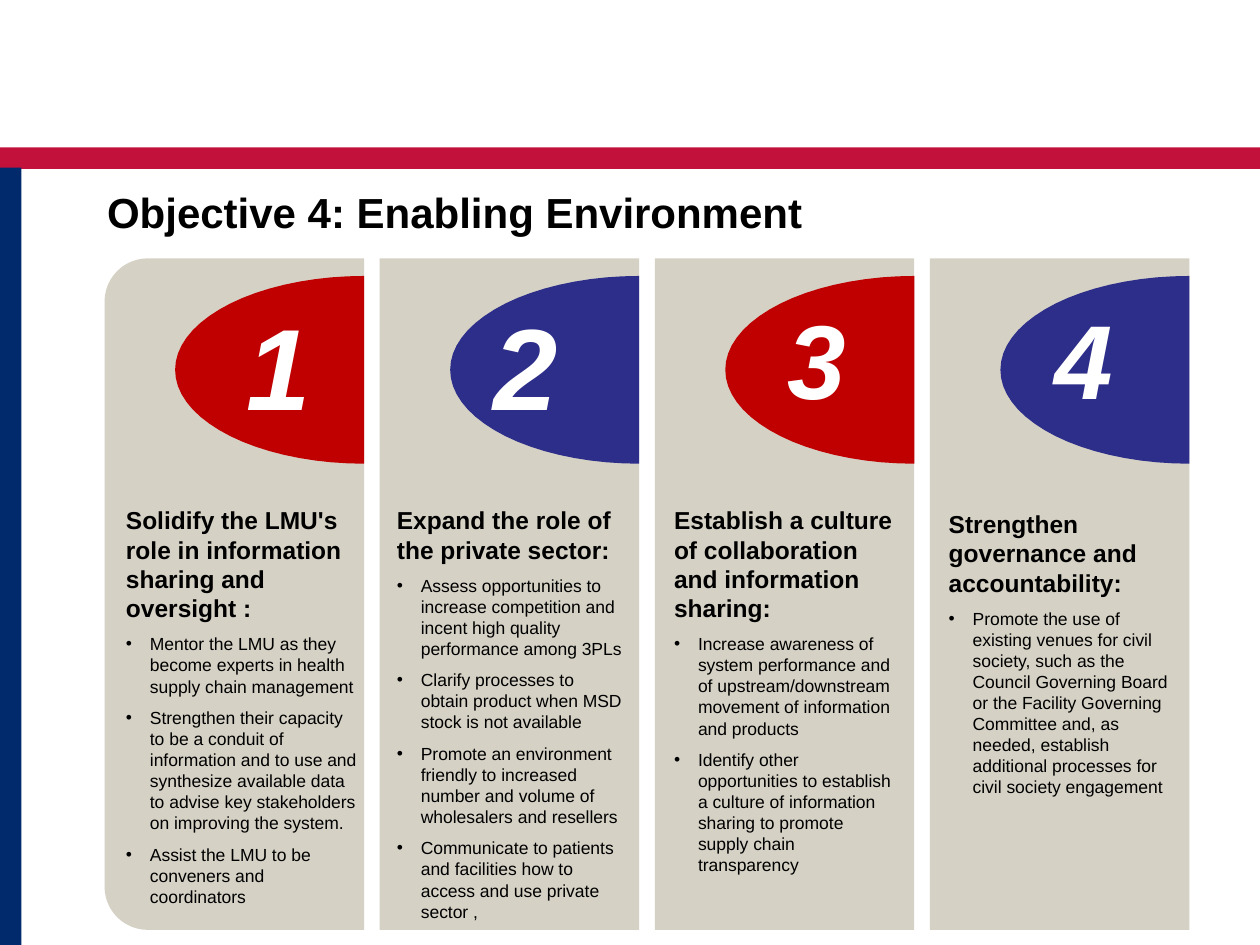
"""Build the slide on Objective 4, with four numbered cards."""
from dataclasses import dataclass
from math import cos, pi, sin

from lxml.etree import SubElement
from pptx import Presentation
from pptx.dml.color import RGBColor
from pptx.enum.shapes import MSO_SHAPE as Preset
from pptx.enum.text import MSO_ANCHOR as Anchor, PP_ALIGN as Align
from pptx.oxml.ns import qn
from pptx.util import Inches, Pt

COLORS = {
    "crimson": "C2113A",
    "navy": "002A6C",
    "card": "D5D1C5",
    "red": "C00000",
    "blue": "2D2D8A",
    "white": "FFFFFF",
    "black": "000000",
}
FONT = "Arial"
CARD_LEFT, LAST_CARD_LEFT, CARD_TOP = 0.83, 7.38, 2.05
CARD_PITCH = (LAST_CARD_LEFT - CARD_LEFT) / 3
CARD_WIDTH, CARD_HEIGHT = 2.06, 5.33
ARC_TOP, ARC_WIDTH, ARC_HEIGHT, ARC_STEPS = 2.19, 1.5, 1.49, 36


@dataclass(frozen=True)
class TextArea:
    left: float
    top: float
    width: float
    height: float


@dataclass(frozen=True)
class Card:
    accent: str
    number_area: TextArea
    number_size: int
    body_area: TextArea
    heading: str
    bullets: tuple[str, ...]


CARDS = (
    Card("red", TextArea(1.96, 2.34, 0.85, 1.02), 66, TextArea(1, 4.01, 1.84, 3.21),
         "Solidify the LMU's role in information sharing and oversight :",
         ("Mentor the LMU as they become experts in health supply chain management",
          "Strengthen their capacity to be a conduit of information and to use and "
          "synthesize available data to advise key stakeholders on improving the system.",
          "Assist the LMU to be conveners and coordinators")),
    Card("blue", TextArea(3.92, 2.34, 1.08, 1.02), 66, TextArea(3.15, 4.01, 1.81, 3.33),
         "Expand the role of the private sector:",
         ("Assess opportunities to increase competition and incent high quality "
          "performance among 3PLs",
          "Clarify processes to obtain product when MSD stock is not available",
          "Promote an environment friendly to increased number and volume of "
          "wholesalers and resellers",
          "Communicate to patients and facilities how to access and use private sector ,")),
    Card("red", TextArea(6.25, 2.34, 0.98, 0.93), 60, TextArea(5.35, 4.01, 1.74, 2.96),
         "Establish a culture of collaboration and information sharing:",
         ("Increase awareness of system performance and of upstream/downstream "
          "movement of information and products",
          "Identify other opportunities to establish a culture of information sharing "
          "to promote supply chain transparency")),
    Card("blue", TextArea(8.37, 2.34, 1.02, 0.93), 60, TextArea(7.53, 4.04, 1.74, 2.31),
         "Strengthen governance and accountability:",
         ("Promote the use of existing venues for civil society, such as the Council "
          "Governing Board or the Facility Governing Committee and, as needed, establish "
          "additional processes for civil society engagement",)),
)


def paint(shape, color: str) -> None:
    shape.shadow.inherit = False
    shape.fill.solid()
    shape.fill.fore_color.rgb = RGBColor.from_string(COLORS[color])
    shape.line.fill.background()


def add_block(shapes, preset, left: float, top: float, width: float, height: float, color: str):
    shape = shapes.add_shape(preset, Inches(left), Inches(top), Inches(width), Inches(height))
    paint(shape, color)
    return shape


def add_half_ellipse(shapes, right: float, color: str) -> None:
    middle = ARC_TOP + ARC_HEIGHT / 2
    angles = [pi * step / ARC_STEPS for step in range(ARC_STEPS + 1)]
    points = [(Inches(right - ARC_WIDTH * sin(angle)),
               Inches(middle - ARC_HEIGHT / 2 * cos(angle))) for angle in angles]
    builder = shapes.build_freeform(*points[0])
    builder.add_line_segments(points[1:], close=True)
    paint(builder.convert_to_shape(), color)


def add_run(paragraph, text: str, size: int, color: str, bold=False, italic=False) -> None:
    run = paragraph.add_run()
    run.text = text
    font = run.font
    font.name, font.size, font.bold, font.italic = FONT, Pt(size), bold, italic
    font.color.rgb = RGBColor.from_string(COLORS[color])


def add_frame(shapes, area: TextArea):
    box = shapes.add_textbox(Inches(area.left), Inches(area.top),
                             Inches(area.width), Inches(area.height))
    frame = box.text_frame
    frame.word_wrap = True
    frame.margin_left = frame.margin_right = frame.margin_top = frame.margin_bottom = 0
    return frame


def add_bullet(paragraph) -> None:
    properties = paragraph._p.get_or_add_pPr()
    properties.set("marL", str(Inches(0.19)))
    properties.set("indent", str(-Inches(0.19)))
    SubElement(properties, qn("a:buFont"), typeface=FONT)
    SubElement(properties, qn("a:buChar"), char="•")


def add_body(shapes, card: Card) -> None:
    frame = add_frame(shapes, card.body_area)
    heading = frame.paragraphs[0]
    heading.space_after = Pt(3)
    add_run(heading, card.heading, 14, "black", bold=True)
    for text in card.bullets:
        paragraph = frame.add_paragraph()
        add_bullet(paragraph)
        paragraph.space_before = paragraph.space_after = Pt(3)
        add_run(paragraph, text, 10, "black")


def add_card_background(shapes, index: int, color: str) -> None:
    left = CARD_LEFT + CARD_PITCH * index
    group = shapes.add_group_shape().shapes
    if index == 0:
        shift = (CARD_HEIGHT - CARD_WIDTH) / 2
        panel = add_block(group, Preset.ROUND_2_SAME_RECTANGLE, left - shift,
                          CARD_TOP + shift, CARD_HEIGHT, CARD_WIDTH, "card")
        panel.rotation = 270
    else:
        add_block(group, Preset.RECTANGLE, left, CARD_TOP, CARD_WIDTH, CARD_HEIGHT, "card")
    add_half_ellipse(group, left + CARD_WIDTH, color)


def add_number(shapes, number: int, card: Card) -> None:
    paragraph = add_frame(shapes, card.number_area).paragraphs[0]
    add_run(paragraph, str(number), card.number_size, "white", bold=True, italic=True)


def format_title(title, text: str) -> None:
    title.left, title.top, title.width, title.height = map(Inches, (0.75, 1.43, 8.5, 0.67))
    frame = title.text_frame
    frame.vertical_anchor = Anchor.TOP
    frame.margin_top = Inches(0.05)
    paragraph = frame.paragraphs[0]
    paragraph.alignment = Align.LEFT
    add_run(paragraph, text, 24, "black", bold=True)


def main() -> None:
    presentation = Presentation()
    presentation.slide_width, presentation.slide_height = Inches(10), Inches(7.5)
    slide = presentation.slides.add_slide(presentation.slide_layouts[5])
    shapes = slide.shapes
    add_block(shapes, Preset.RECTANGLE, 0, 1.17, 10, 0.17, "crimson")
    add_block(shapes, Preset.RECTANGLE, 0, 1.33, 0.17, 6.17, "navy")
    format_title(shapes.title, "Objective 4: Enabling Environment")
    for index, card in enumerate(CARDS):
        add_card_background(shapes, index, card.accent)
        add_number(shapes, index + 1, card)
        add_body(shapes, card)
    presentation.save("out.pptx")


if __name__ == "__main__":
    main()
